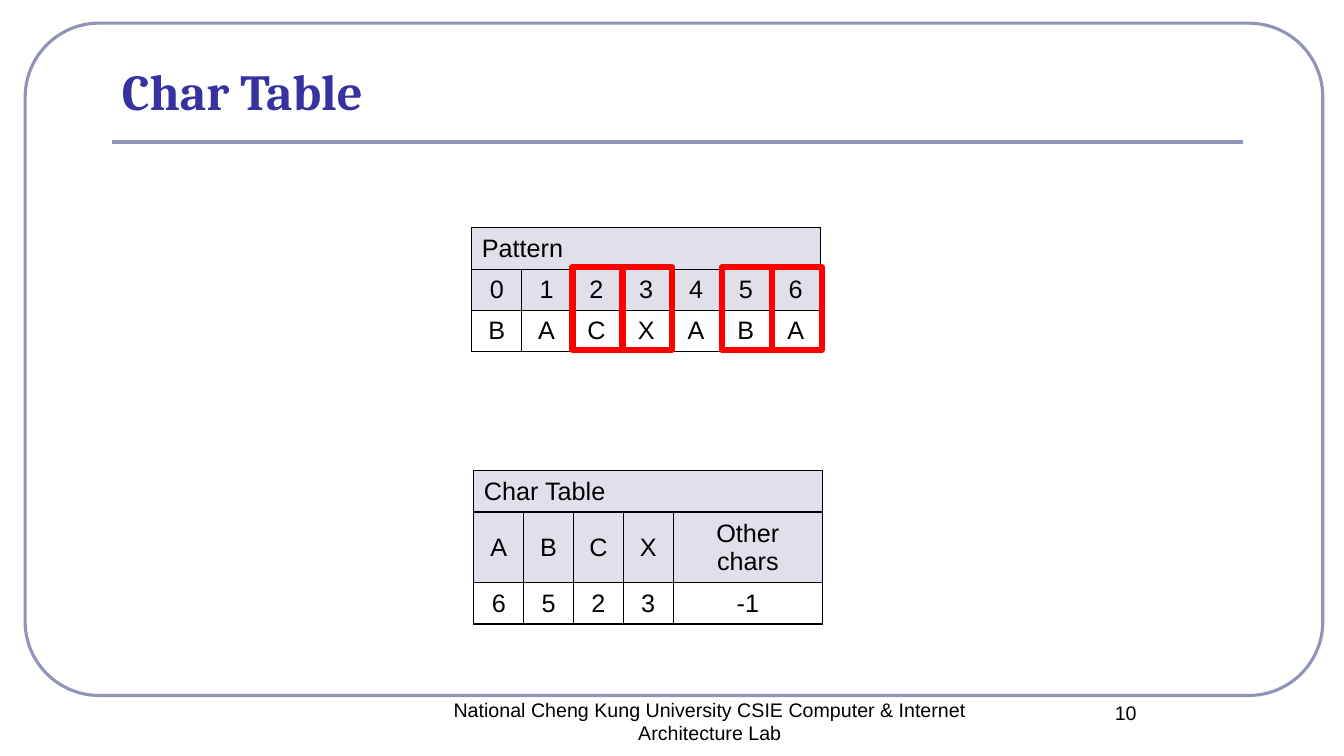
import pptx
import pptx.dml.color
import pptx.enum.shapes
import pptx.enum.text
import pptx.oxml
import pptx.oxml.ns
import pptx.util
from pptx.util import Inches

TITLE = "Char Table"
FOOTER = "National Cheng Kung University CSIE Computer & Internet Architecture Lab"
PAGE_NUMBER = "10"

PATTERN = {
    "heading": "Pattern",
    "rows": ["0123456", "BACXABA"],
    "units": [1] * 7,
    "at": (4.68, 2.26),
}
CHAR_TABLE = {
    "heading": "Char Table",
    "rows": [["A", "B", "C", "X", "Other chars"], ["6", "5", "2", "3", "-1"]],
    "units": [1, 1, 1, 1, 3],
    "at": (4.7, 4.67),
}
LAST_OCCURRENCES = [2, 3, 5, 6]

TABLE_WIDTH = 3.46
UNIT = TABLE_WIDTH / 7
ROW_HEIGHT = 0.41
FRAME_COLOR = "9094B8"
TITLE_COLOR = "3732A0"
HEADER_FILL = "E0E0EB"
MARK_COLOR = "FF0000"
BLACK = "000000"

ALIGN = pptx.enum.text.PP_ALIGN
ANCHOR = pptx.enum.text.MSO_ANCHOR
SHAPE = pptx.enum.shapes.MSO_SHAPE


def color(hex_string):
    return pptx.dml.color.RGBColor.from_string(hex_string)


def write(frame, text, size, align, font="Arial", hex_string=BLACK, bold=False):
    frame.text = text
    para = frame.paragraphs[0]
    para.alignment = align
    span = para.runs[0]
    span.font.name = font
    span.font.size = pptx.util.Pt(size)
    span.font.bold = bold
    span.font.color.rgb = color(hex_string)


def add_outline(page, preset, bounds, hex_string, width):
    """Add an unfilled shape with a coloured line."""
    shape = page.shapes.add_shape(preset, *map(Inches, bounds))
    shape.shadow.inherit = False
    shape.fill.background()
    shape.line.color.rgb = color(hex_string)
    shape.line.width = pptx.util.Pt(width)
    return shape


def add_caption(page, text, bounds):
    box = page.shapes.add_textbox(*map(Inches, bounds))
    box.text_frame.word_wrap = True
    write(box.text_frame, text, 14, ALIGN.CENTER)


def add_borders(cell):
    properties = cell._tc.get_or_add_tcPr()
    for side in ("lnL", "lnR", "lnT", "lnB"):
        properties.append(pptx.oxml.parse_xml(
            f'<a:{side} {pptx.oxml.ns.nsdecls("a")} w="12700"><a:solidFill>'
            f'<a:srgbClr val="{BLACK}"/></a:solidFill></a:{side}>'))


def add_lookup(page, heading, rows, units, at):
    """Add a table with a merged heading, a shaded key row and a value row."""
    left, top = at
    row_count = len(rows) + 1
    table = page.shapes.add_table(
        row_count, len(units), Inches(left), Inches(top),
        Inches(TABLE_WIDTH), Inches(ROW_HEIGHT * row_count)).table
    table.first_row = False
    table.horz_banding = False
    for column, unit in zip(table.columns, units):
        column.width = Inches(unit * UNIT)
    for row in table.rows:
        row.height = Inches(ROW_HEIGHT)
    for cell in table.iter_cells():
        add_borders(cell)
    for column in range(len(units)):
        for row in range(row_count):
            cell = table.cell(row, column)
            cell.vertical_anchor = ANCHOR.MIDDLE
            if row < row_count - 1:
                cell.fill.solid()
                cell.fill.fore_color.rgb = color(HEADER_FILL)
            else:
                cell.fill.background()
            if row > 0:
                write(cell.text_frame, rows[row - 1][column], 18, ALIGN.CENTER)
    table.cell(0, 0).merge(table.cell(0, len(units) - 1))
    write(table.cell(0, 0).text_frame, heading, 18, ALIGN.LEFT)


def main():
    deck = pptx.Presentation()
    deck.slide_width = Inches(13.33)
    deck.slide_height = Inches(7.5)
    page = deck.slides.add_slide(deck.slide_layouts[5])

    frame = add_outline(page, SHAPE.ROUNDED_RECTANGLE,
                        (0.25, 0.23, 12.87, 6.67), FRAME_COLOR, 2.25)
    frame.adjustments[0] = 0.11

    rule = page.shapes.add_connector(
        pptx.enum.shapes.MSO_CONNECTOR.STRAIGHT,
        Inches(1.11), Inches(1.41), Inches(12.33), Inches(1.41))
    rule.line.color.rgb = color(FRAME_COLOR)
    rule.line.width = pptx.util.Pt(3)
    rule._element.spPr.append(pptx.oxml.parse_xml(
        f'<a:effectLst {pptx.oxml.ns.nsdecls("a")}/>'))

    title = page.shapes.title
    title.left, title.top, title.width, title.height = map(
        Inches, (1.11, 0.6, 11.22, 0.65))
    title.text_frame.vertical_anchor = ANCHOR.BOTTOM
    title.text_frame.auto_size = pptx.enum.text.MSO_AUTO_SIZE.NONE
    write(title.text_frame, TITLE, 36, ALIGN.LEFT, "Cambria", TITLE_COLOR, True)

    add_caption(page, FOOTER, (4.15, 6.87, 5.78, 0.5))
    add_caption(page, PAGE_NUMBER, (10, 6.9, 2.33, 0.5))

    add_lookup(page, **PATTERN)
    add_lookup(page, **CHAR_TABLE)

    left, top = PATTERN["at"]
    for index in LAST_OCCURRENCES:
        add_outline(page, SHAPE.RECTANGLE,
                    (left + index * UNIT + 0.01, top + ROW_HEIGHT - 0.02,
                     UNIT, 2 * ROW_HEIGHT), MARK_COLOR, 4.5)

    deck.save("out.pptx")


if __name__ == "__main__":
    main()
